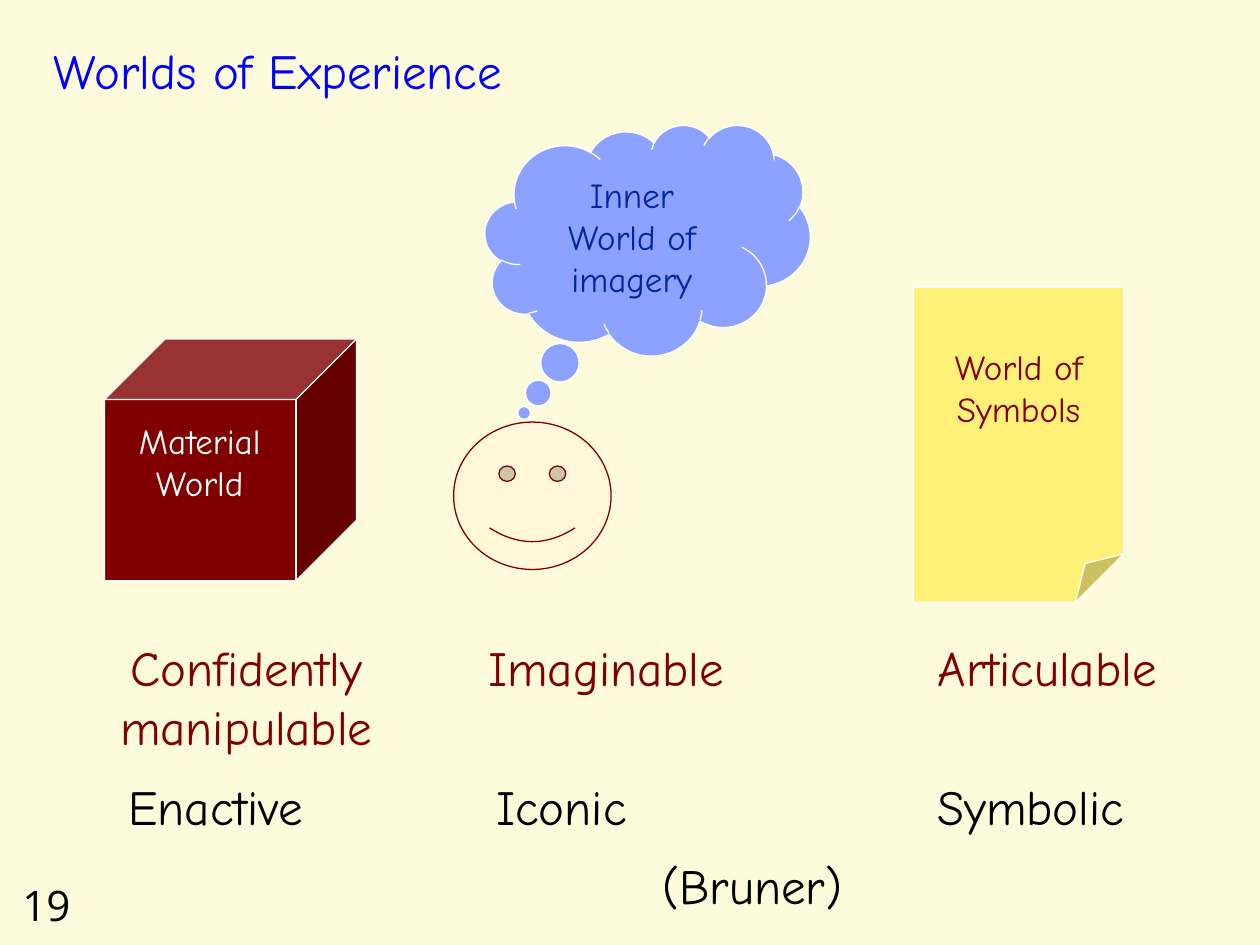
from lxml import etree
from pptx import Presentation
from pptx.dml.color import RGBColor
from pptx.enum import shapes as kinds, text as layout
from pptx.oxml.ns import qn
from pptx.util import Inches, Pt

FONT = "Comic Neue"
MAROON, WHITE, BLACK = "800000", "FFFFFF", "000000"
LEFT, CENTER = layout.PP_ALIGN.LEFT, layout.PP_ALIGN.CENTER


def color(value):
    return RGBColor.from_string(value)


def add_text(parent, box, lines, size, ink, align=LEFT, wrap=True, font=FONT,
             anchor=layout.MSO_ANCHOR.TOP, grow=True):
    """Place one paragraph in a box, with a line break between the given lines."""
    frame = parent.add_textbox(*map(Inches, box)).text_frame
    frame.word_wrap = wrap
    frame.vertical_anchor = anchor
    frame.auto_size = (layout.MSO_AUTO_SIZE.SHAPE_TO_FIT_TEXT if grow
                       else layout.MSO_AUTO_SIZE.NONE)
    paragraph = frame.paragraphs[0]
    paragraph.alignment = align
    for index, line in enumerate(lines.split("\n")):
        if index:
            paragraph.add_line_break()
        run = paragraph.add_run()
        run.text = line
        run.font.name = font
        run.font.size = Pt(size)
        run.font.color.rgb = color(ink)


def set_adjustments(figure, values):
    """Write the guides as XML, as python-pptx lists none for a folded corner."""
    geometry = figure._element.spPr.find(qn("a:prstGeom"))
    for child in list(geometry):
        geometry.remove(child)
    guides = etree.SubElement(geometry, qn("a:avLst"))
    for number, value in enumerate(values, 1):
        name = "adj" if len(values) == 1 else f"adj{number}"
        etree.SubElement(guides, qn("a:gd"), name=name,
                         fmla=f"val {round(value * 100000)}")


def add_figure(parent, kind, box, fill, line, adjustments):
    figure = parent.add_shape(kind, *map(Inches, box))
    figure.shadow.inherit = False
    figure.fill.solid()
    figure.fill.fore_color.rgb = color(fill)
    figure.line.color.rgb = color(line)
    figure.line.width = Pt(0.75)
    set_adjustments(figure, adjustments)


def add_world_label(world, left, top, label, ink, height=0.77):
    add_text(world, (left, top, 1.33, height), label, 20, ink, CENTER)


def add_material_world(slide, left, top, width, height):
    world = slide.shapes.add_group_shape().shapes
    add_figure(world, kinds.MSO_SHAPE.CUBE, (left, top, width, height),
               MAROON, WHITE, [0.25])
    add_world_label(world, left + 0.09, top + 0.59, "Material World", WHITE)


def add_symbol_world(slide, left, top, width, height):
    world = slide.shapes.add_group_shape().shapes
    add_figure(world, kinds.MSO_SHAPE.FOLDED_CORNER, (left, top, width, height),
               "FFF077", WHITE, [0.23])
    add_world_label(world, left + 0.17, top + 0.41, "World of Symbols", MAROON)


def add_inner_world(slide, left, top, width, height):
    """A smiling face at the bottom left, with a thought cloud at the top right."""
    world = slide.shapes.add_group_shape().shapes
    face_width, face_height = 1.25, 1.17
    cloud_width, cloud_height = 2.58, 1.83
    add_figure(world, kinds.MSO_SHAPE.SMILEY_FACE,
               (left, top + height - face_height, face_width, face_height),
               "FFF7D7", MAROON, [0.05])
    add_figure(world, kinds.MSO_SHAPE.CLOUD_CALLOUT,
               (left + width - cloud_width, top, cloud_width, cloud_height),
               "8DA1FF", WHITE, [-0.38, 0.75])
    add_world_label(world, left + 0.75, top + 0.34, "Inner World of imagery",
                    "00279F", 1.1)


def add_captions(slide, top, captions, ink, align):
    """Place a row of captions, each given as left, width, height and text."""
    for left, width, height, caption in captions:
        add_text(slide.shapes, (left, top, width, height), caption, 28, ink,
                 align, wrap=False)


def add_title(slide, *box):
    add_text(slide.shapes, box, "Worlds of Experience", 28, "0000FF",
             anchor=layout.MSO_ANCHOR.BOTTOM, grow=False)


def add_page_number(slide, *box):
    add_text(slide.shapes, box, "19", 24, BLACK, font="Open Sans")


def main():
    deck = Presentation()
    deck.slide_width, deck.slide_height = Inches(10), Inches(7.5)
    slide = deck.slides.add_slide(deck.slide_layouts[6])
    slide.background.fill.solid()
    slide.background.fill.fore_color.rgb = color("FDFBDC")

    add_page_number(slide, 0.08, 6.93, 0.75, 0.5)
    add_title(slide, 0.33, 0.17, 8.5, 0.67)
    add_material_world(slide, 0.83, 2.69, 2, 1.92)
    add_symbol_world(slide, 7.25, 2.28, 1.67, 2.5)
    add_inner_world(slide, 3.6, 0.99, 2.83, 3.53)
    add_captions(slide, 6.11, [(0.92, 1.66, 0.57, "Enactive"),
                               (3.84, 1.24, 0.57, "Iconic"),
                               (7.34, 1.73, 0.57, "Symbolic")], BLACK, LEFT)
    add_captions(slide, 5.01, [(0.83, 2.25, 1.04, "Confidently\nmanipulable"),
                               (3.74, 2.14, 0.57, "Imaginable"),
                               (7.24, 2.14, 0.57, "Articulable")], MAROON, CENTER)
    add_captions(slide, 6.74, [(5.16, 1.65, 0.57, "(Bruner)")], BLACK, LEFT)
    deck.save("out.pptx")


if __name__ == "__main__":
    main()
